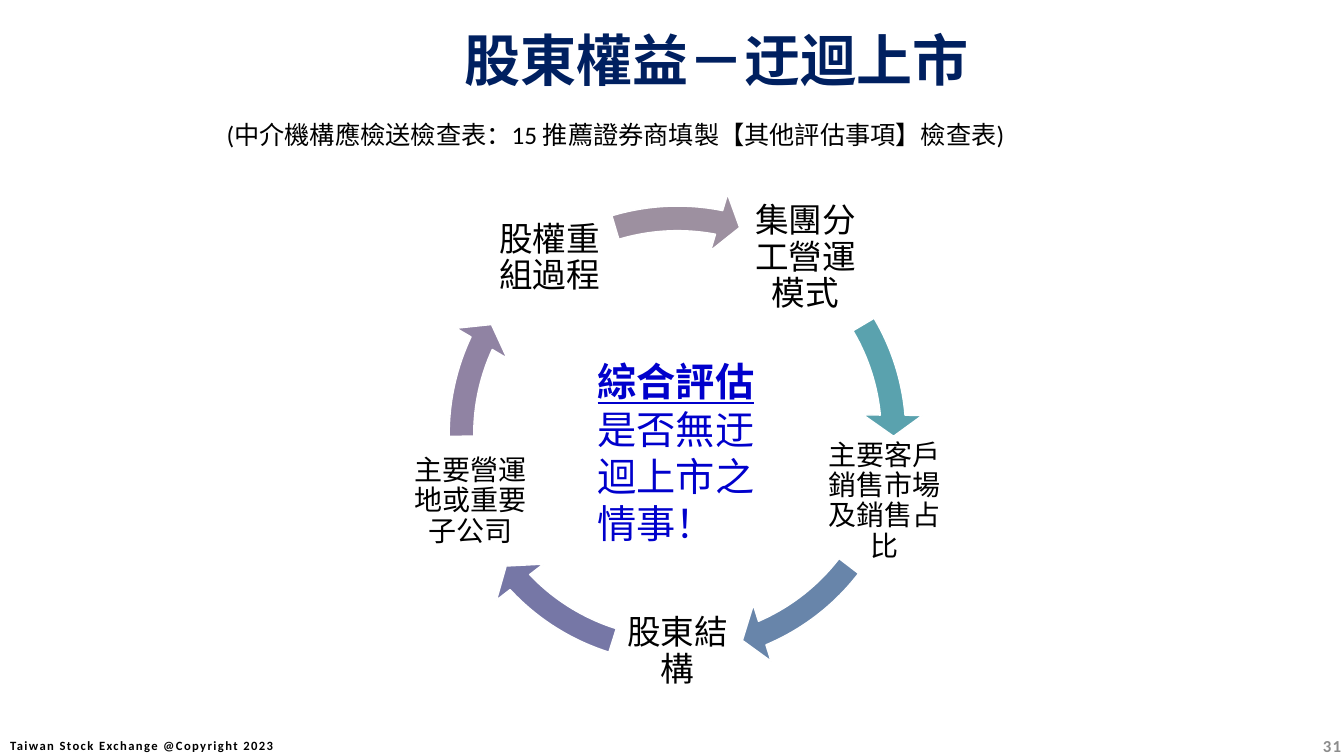
import math
from dataclasses import dataclass

import pptx
import pptx.dml.color
import pptx.enum.shapes
import pptx.enum.text
import pptx.util

RGBColor = pptx.dml.color.RGBColor
Inches = pptx.util.Inches
Pt = pptx.util.Pt
Align = pptx.enum.text.PP_ALIGN
Anchor = pptx.enum.text.MSO_ANCHOR

BLACK = RGBColor(0x00, 0x00, 0x00)
WHITE = RGBColor(0xFF, 0xFF, 0xFF)
GRAY = RGBColor(0x8C, 0x8C, 0x8C)
NAVY = RGBColor(0x00, 0x20, 0x60)
BLUE = RGBColor(0x00, 0x00, 0xCC)
TEAL = RGBColor(0x5A, 0xA2, 0xAE)
STEEL = RGBColor(0x68, 0x85, 0xAA)
INDIGO = RGBColor(0x76, 0x77, 0xA6)
PURPLE = RGBColor(0x90, 0x83, 0xA3)
MAUVE = RGBColor(0x9D, 0x90, 0xA0)

LATIN = "Calibri"
SANS = "Noto Sans CJK SC"
SERIF = "Vollkorn"

CENTER_X, CENTER_Y = 6.72, 4.31
RING_SIZE = 4.87
LABEL_RADIUS = 2.16
LABEL_SIZE = 1.3
LABEL_INSET = 0.03
FIRST_ANGLE = -54


@dataclass(frozen=True)
class Span:
    text: str
    size: float
    color: RGBColor = BLACK
    name: str = LATIN
    bold: bool = False
    underline: bool = False
    spacing: int = 0


@dataclass(frozen=True)
class TextBlock:
    left: float
    top: float
    width: float
    height: float
    spans: tuple[Span, ...]
    align: Align = Align.LEFT
    anchor: Anchor = Anchor.TOP
    inset: float | None = None
    line_spacing: float | None = None


@dataclass(frozen=True)
class Stage:
    label: str
    size: int
    arrow_color: RGBColor
    arrow_end: float
    arrow_start: float


STAGES = (
    Stage("集團分工營運模式", 24, TEAL, 212.94, 197.66),
    Stage("主要客戶銷售市場及銷售占比", 20, STEEL, 40.15, 22.53),
    Stage("股東結構", 24, INDIGO, 82.11, 64.49),
    Stage("主要營運地或重要子公司", 20, PURPLE, 122.98, 107.71),
    Stage("股權重組過程", 24, MAUVE, 168.66, 151.98),
)

FOOTER = TextBlock(
    -0.14, 7.2, 3.09, 0.4,
    (Span("Taiwan Stock Exchange @Copyright 2023", 9, bold=True, spacing=100),),
    Align.CENTER, Anchor.MIDDLE,
)

PAGE_TEXTS = (
    TextBlock(
        12.81, 7.2, 0.59, 0.4,
        (Span("31", 12, GRAY, bold=True, spacing=100),),
        Align.RIGHT, Anchor.MIDDLE,
    ),
    TextBlock(
        2.15, 1.13, 7.99, 0.4,
        (Span("(中介機構應檢送檢查表：15 推薦證券商填製【其他評估事項】檢查表)", 18),),
    ),
    TextBlock(
        5.83, 3.5, 2, 1.99,
        (
            Span("綜合評估", 28, BLUE, SANS, bold=True, underline=True),
            Span("是否無迂迴上市之情事！", 28, BLUE, SANS),
        ),
    ),
    TextBlock(
        2.03, 0.27, 10.15, 0.63,
        (
            Span("股東權益", 40, NAVY, SERIF, bold=True),
            Span("－", 40, NAVY, SANS, bold=True),
            Span("迂迴上市", 40, NAVY, SERIF, bold=True),
        ),
        Align.CENTER, Anchor.MIDDLE,
    ),
)


def add_text(page: pptx.slide.Slide, block: TextBlock) -> None:
    box = page.shapes.add_textbox(
        Inches(block.left), Inches(block.top), Inches(block.width), Inches(block.height)
    )
    frame = box.text_frame
    frame_format = {"word_wrap": True, "vertical_anchor": block.anchor}
    if block.inset is not None:
        for side in ("left", "top", "right", "bottom"):
            frame_format[f"margin_{side}"] = Inches(block.inset)
    for key, value in frame_format.items():
        setattr(frame, key, value)
    para = frame.paragraphs[0]
    para.alignment = block.align
    para.line_spacing = block.line_spacing
    for span in block.spans:
        run = para.add_run()
        run.text = span.text
        font_format = {
            "name": span.name,
            "size": Pt(span.size),
            "bold": span.bold,
            "underline": span.underline,
        }
        for key, value in font_format.items():
            setattr(run.font, key, value)
        run.font.color.rgb = span.color
        if span.spacing:
            run.font._element.set("spc", str(span.spacing))


def add_stage(page: pptx.slide.Slide, stage: Stage, angle: float) -> None:
    label_x = CENTER_X + LABEL_RADIUS * math.cos(angle)
    label_y = CENTER_Y + LABEL_RADIUS * math.sin(angle)
    add_text(page, TextBlock(
        label_x - LABEL_SIZE / 2, label_y - LABEL_SIZE / 2, LABEL_SIZE, LABEL_SIZE,
        (Span(stage.label, stage.size),),
        Align.CENTER, Anchor.MIDDLE, LABEL_INSET, 0.9,
    ))
    arrow = page.shapes.add_shape(
        pptx.enum.shapes.MSO_SHAPE.CIRCULAR_ARROW,
        Inches(CENTER_X - RING_SIZE / 2), Inches(CENTER_Y - RING_SIZE / 2),
        Inches(RING_SIZE), Inches(RING_SIZE),
    )
    adjustments = (0.05, 3.36, stage.arrow_end, stage.arrow_start, 0.06)
    for index, value in enumerate(adjustments):
        arrow.adjustments[index] = value
    arrow.shadow.inherit = False
    arrow.fill.solid()
    arrow.fill.fore_color.rgb = stage.arrow_color
    arrow.line.color.rgb = WHITE
    arrow.line.width = Pt(1)


def main() -> None:
    deck = pptx.Presentation()
    deck.slide_width = Inches(13.33)
    deck.slide_height = Inches(7.5)
    page = deck.slides.add_slide(deck.slide_layouts[6])
    add_text(page, FOOTER)
    for index, stage in enumerate(STAGES):
        add_stage(page, stage, math.radians(FIRST_ANGLE + index * 360 / len(STAGES)))
    for block in PAGE_TEXTS:
        add_text(page, block)
    deck.save("out.pptx")


if __name__ == "__main__":
    main()
